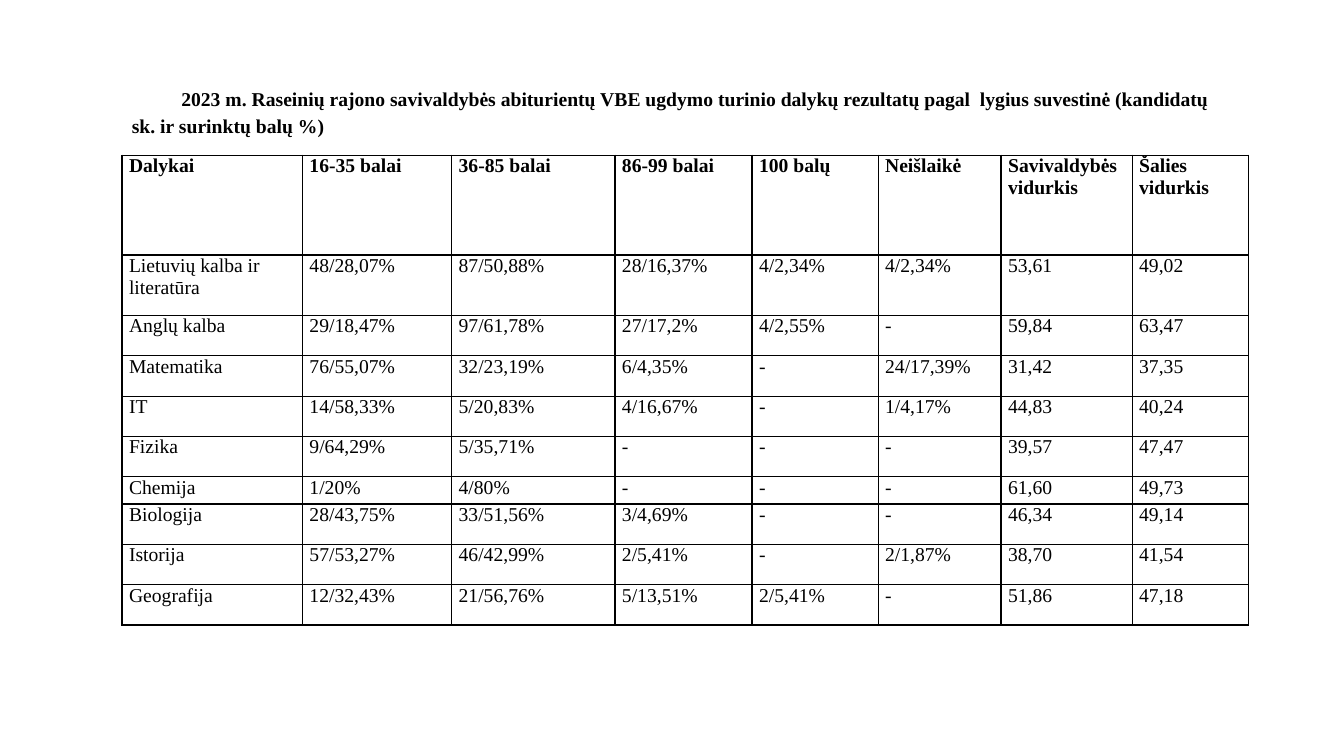
from lxml import etree
from pptx import Presentation
from pptx import util as u
from pptx.dml.color import RGBColor
from pptx.enum import text
from pptx.oxml import ns

FONT = "Times New Roman"
COLORS = {"ink": "000000", "paper": "FFFFFF"}
LEFT, WIDTH = 1.21, 11.16

TITLE = ("2023 m. Raseinių rajono savivaldybės abiturientų VBE ugdymo turinio dalykų "
         "rezultatų pagal  lygius suvestinė (kandidatų sk. ir surinktų balų %)")

COLUMN_WIDTHS = [1.79, 1.48, 1.62, 1.36, 1.25, 1.22, 1.3, 1.15]
ROW_HEIGHTS = {"Dalykai": 0.99, "Lietuvių kalba ir literatūra": 0.6, "Chemija": 0.27}
DEFAULT_ROW_HEIGHT = 0.4

RESULTS = [
    ["Dalykai", "16-35 balai", "36-85 balai", "86-99 balai", "100 balų", "Neišlaikė",
     "Savivaldybės vidurkis", "Šalies vidurkis"],
    ["Lietuvių kalba ir literatūra", "48/28,07%", "87/50,88%", "28/16,37%", "4/2,34%",
     "4/2,34%", "53,61", "49,02"],
    ["Anglų kalba", "29/18,47%", "97/61,78%", "27/17,2%", "4/2,55%", "-", "59,84", "63,47"],
    ["Matematika", "76/55,07%", "32/23,19%", "6/4,35%", "-", "24/17,39%", "31,42", "37,35"],
    ["IT", "14/58,33%", "5/20,83%", "4/16,67%", "-", "1/4,17%", "44,83", "40,24"],
    ["Fizika", "9/64,29%", "5/35,71%", "-", "-", "-", "39,57", "47,47"],
    ["Chemija", "1/20%", "4/80%", "-", "-", "-", "61,60", "49,73"],
    ["Biologija", "28/43,75%", "33/51,56%", "3/4,69%", "-", "-", "46,34", "49,14"],
    ["Istorija", "57/53,27%", "46/42,99%", "2/5,41%", "-", "2/1,87%", "38,70", "41,54"],
    ["Geografija", "12/32,43%", "21/56,76%", "5/13,51%", "2/5,41%", "-", "51,86", "47,18"],
]


def format_paragraph(paragraph, bold):
    paragraph.alignment = text.PP_ALIGN.LEFT
    paragraph.space_after = u.Pt(8)
    for run in paragraph.runs:
        run.font.name = FONT
        run.font.size = u.Pt(14)
        run.font.bold = bold
        run.font.color.rgb = RGBColor.from_string(COLORS["ink"])


def add_title(slide):
    box = slide.shapes.add_textbox(u.Inches(LEFT), u.Inches(0.78),
                                   u.Inches(WIDTH), u.Inches(6.09))
    frame = box.text_frame
    frame.word_wrap = True
    frame.vertical_anchor = text.MSO_ANCHOR.TOP
    frame.margin_right = u.Inches(0.15)
    frame.text = TITLE
    paragraph = frame.paragraphs[0]
    paragraph.line_spacing = 1.15
    format_paragraph(paragraph, bold=True)
    paragraph._p.get_or_add_pPr().set("indent", str(u.Inches(0.49)))


def add_borders(cell):
    properties = cell._tc.get_or_add_tcPr()
    for side in ("lnL", "lnR", "lnT", "lnB"):
        line = etree.SubElement(properties, ns.qn(f"a:{side}"), w=str(u.Pt(1)))
        fill = etree.SubElement(line, ns.qn("a:solidFill"))
        etree.SubElement(fill, ns.qn("a:srgbClr"), val=COLORS["ink"])


def fill_cell(cell, value, bold):
    cell.margin_left = cell.margin_right = u.Inches(0.07)
    cell.margin_top = cell.margin_bottom = 0
    cell.vertical_anchor = text.MSO_ANCHOR.TOP
    cell.text_frame.text = value
    format_paragraph(cell.text_frame.paragraphs[0], bold)
    add_borders(cell)
    cell.fill.background()


def add_results_table(slide):
    heights = [ROW_HEIGHTS.get(row[0], DEFAULT_ROW_HEIGHT) for row in RESULTS]
    frame = slide.shapes.add_table(len(RESULTS), len(COLUMN_WIDTHS), u.Inches(LEFT),
                                   u.Inches(1.54), u.Inches(WIDTH), u.Inches(sum(heights)))
    table = frame.table
    table.first_row = table.horz_banding = False
    for column, width in zip(table.columns, COLUMN_WIDTHS):
        column.width = u.Inches(width)
    for row_index, (row, height) in enumerate(zip(table.rows, heights)):
        row.height = u.Inches(height)
        for cell, value in zip(row.cells, RESULTS[row_index]):
            fill_cell(cell, value, bold=row_index == 0)


def main():
    presentation = Presentation()
    presentation.slide_width = u.Inches(13.33)
    presentation.slide_height = u.Inches(7.5)
    slide = presentation.slides.add_slide(presentation.slide_layouts[6])
    background = slide.background.fill
    background.solid()
    background.fore_color.rgb = RGBColor.from_string(COLORS["paper"])
    add_title(slide)
    add_results_table(slide)
    presentation.save("out.pptx")


if __name__ == "__main__":
    main()
